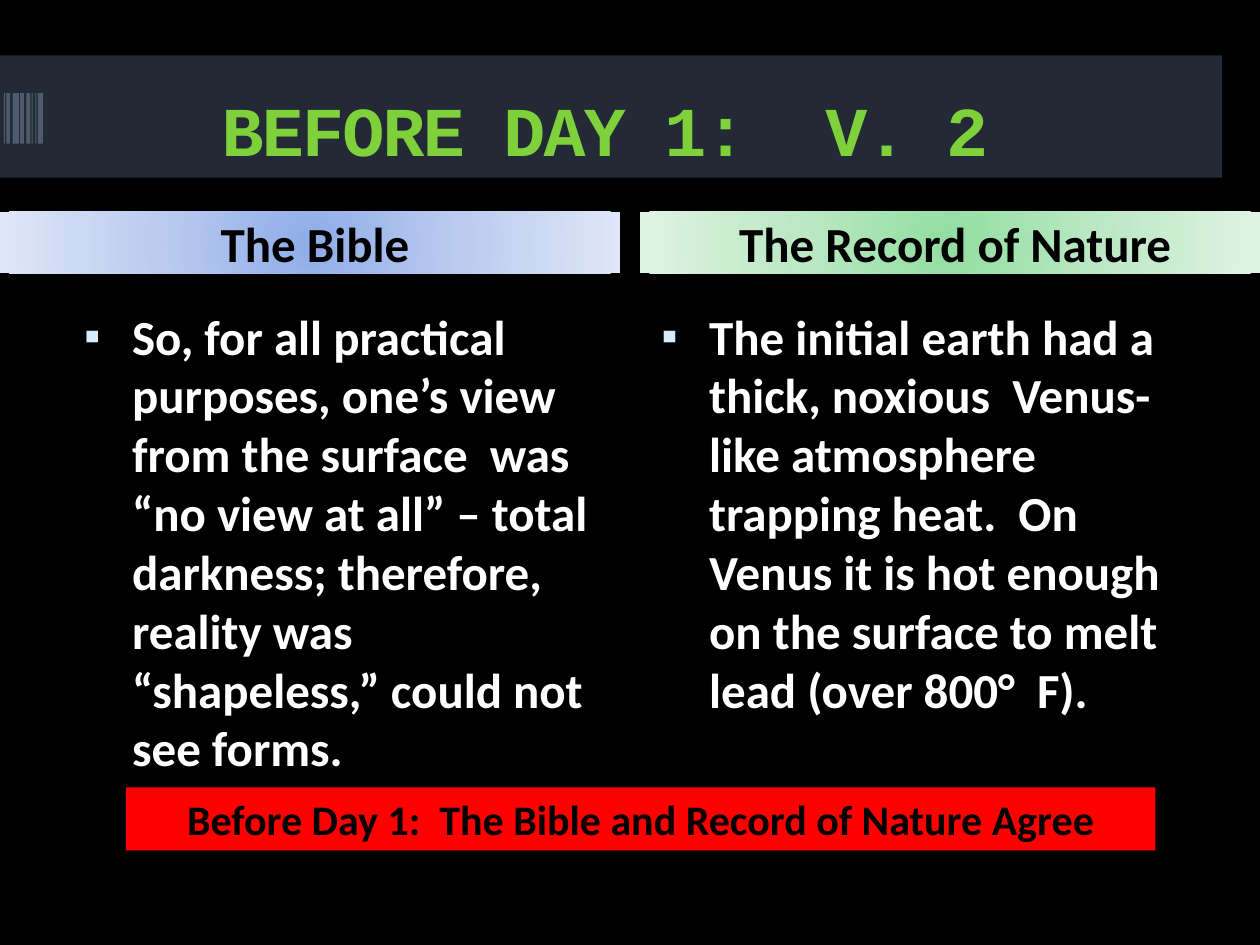
from lxml import etree
from pptx import Presentation
from pptx.dml.color import RGBColor
from pptx.enum.shapes import MSO_SHAPE as Shape
from pptx.enum.text import MSO_ANCHOR as Anchor, PP_ALIGN as Align
from pptx.oxml import parse_xml
from pptx.oxml.ns import nsdecls, qn
from pptx.util import Inches, Pt


def color(value):
    return RGBColor.from_string(value)


def write(box, text, size=28, font="Calibri", ink="FFFFFF", align=Align.LEFT,
          anchor=Anchor.TOP, before=0, margin=0, indent=0, bottom=0.05,
          tracking=None, bullet=None):
    frame = box.text_frame
    frame.word_wrap = True
    frame.vertical_anchor = anchor
    frame.margin_bottom = Inches(bottom)
    para = frame.paragraphs[0]
    para.alignment = align
    para.space_before = Pt(before)
    props = para._p.get_or_add_pPr()
    props.set("marL", str(Inches(margin)))
    props.set("indent", str(Inches(indent)))
    if bullet:
        tint = etree.SubElement(props, qn("a:buClr"))
        etree.SubElement(tint, qn("a:srgbClr"), val="D6ECFF")
        etree.SubElement(props, qn("a:buSzPct"), val="95000")
        etree.SubElement(props, qn("a:buFont"), typeface="Arial")
        etree.SubElement(props, qn("a:buChar"), char=bullet)
    span = para.add_run()
    span.text = text
    span.font.size = Pt(size)
    span.font.name = font
    span.font.bold = True
    span.font.color.rgb = color(ink)
    if tracking:
        span._r.get_or_add_rPr().set("spc", str(tracking))


class Canvas:
    def __init__(self, page, background):
        self.page = page
        page.background.fill.solid()
        page.background.fill.fore_color.rgb = color(background)

    def bar(self, left, top, width, height, fill, alpha=None):
        box = self.page.shapes.add_shape(
            Shape.RECTANGLE, Inches(left), Inches(top), Inches(width), Inches(height))
        box.shadow.inherit = False
        box.line.fill.background()
        box.fill.solid()
        box.fill.fore_color.rgb = color(fill)
        if alpha:
            tint = box._element.spPr.find(qn("a:solidFill"))[0]
            etree.SubElement(tint, qn("a:alpha"), val=str(alpha * 1000))
        return box

    def glow(self, left, top, width, height, shades):
        box = self.bar(left, top, width, height, shades[0])
        stops = "".join(
            f'<a:gs pos="{index * 50000}"><a:srgbClr val="{shade}"/></a:gs>'
            for index, shade in enumerate(shades))
        solid = box._element.spPr.find(qn("a:solidFill"))
        solid.getparent().replace(solid, parse_xml(
            f'<a:gradFill {nsdecls("a")} rotWithShape="1"><a:gsLst>{stops}</a:gsLst>'
            '<a:path path="circle"><a:fillToRect l="50000" t="50000" r="50000" b="50000"/>'
            '</a:path></a:gradFill>'))
        return box

    def text(self, left, top, width, height, text, **style):
        box = self.page.shapes.add_textbox(
            Inches(left), Inches(top), Inches(width), Inches(height))
        write(box, text, **style)


def main():
    deck = Presentation()
    deck.slide_width, deck.slide_height = Inches(10), Inches(7.5)
    canvas = Canvas(deck.slides.add_slide(deck.slide_layouts[6]), "000000")

    canvas.bar(0, 0.44, 9.7, 0.97, "586A86", alpha=40)
    stripes = [(0.1, 0.05), (0.05, 0.03), (0.03, 0.01), (0.16, 0.03),
               (0.21, 0.03), (0.25, 0.01), (0.28, 0.01), (0.3, 0.04)]
    for left, width in stripes:
        canvas.bar(left, 0.74, width, 0.4, "4E5B6F")
    canvas.text(0.55, 0.56, 8.5, 1, "BEFORE DAY 1:  V. 2", size=40,
                font="Courier New", ink="7FD13B", align=Align.CENTER,
                anchor=Anchor.MIDDLE, bottom=0.13, tracking=-100)

    columns = [
        (0, 0.5, 3.79, "The Bible", ("8FADE9", "BCCCEF", "DEE6F7"),
         "So, for all practical purposes, one’s view from the surface  was "
         "“no view at all” – total darkness; therefore, reality was "
         "“shapeless,” could not see forms."),
        (5.08, 5.08, 3.45, "The Record of Nature", ("91DEA0", "BDE8C5", "DFF3E3"),
         "The initial earth had a thick, noxious  Venus-like atmosphere trapping "
         "heat.  On Venus it is hot enough on the surface to melt lead "
         "(over 800°  F)."),
    ]
    for head_left, body_left, height, heading, shades, body in columns:
        header = canvas.glow(head_left, 1.68, 4.92, 0.49, shades)
        write(header, heading, ink="000000", align=Align.CENTER,
              anchor=Anchor.MIDDLE, before=7, margin=0.08)
        canvas.text(body_left, 2.38, 4.42, height, body, before=7,
                    margin=0.45, indent=-0.38, bullet="▪")

    verdict = canvas.bar(1, 6.25, 8.17, 0.5, "FF0000")
    write(verdict, "Before Day 1:  The Bible and Record of Nature Agree", size=24,
          ink="000000", align=Align.CENTER, anchor=Anchor.BOTTOM, before=4.8)

    deck.save("out.pptx")


if __name__ == "__main__":
    main()
